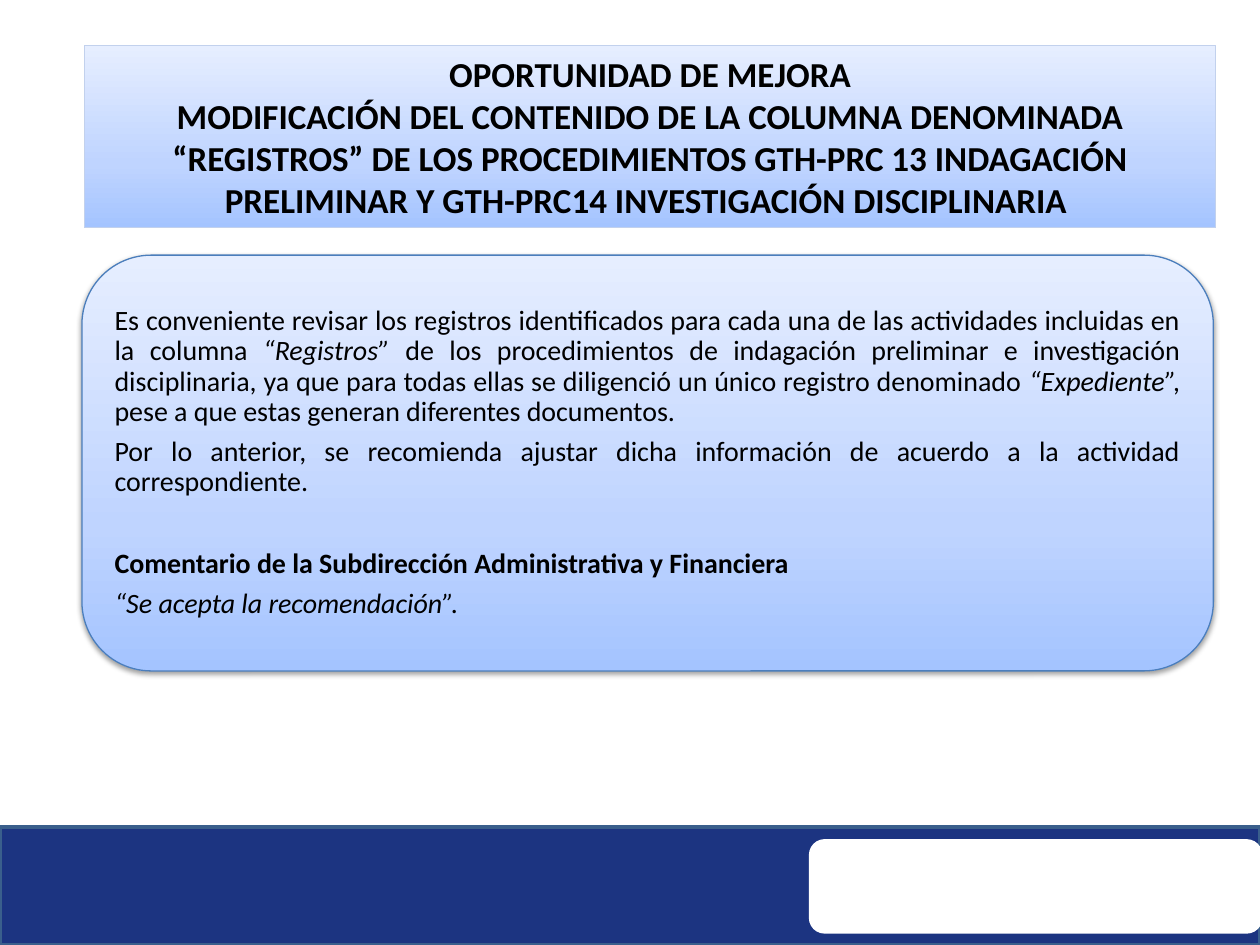
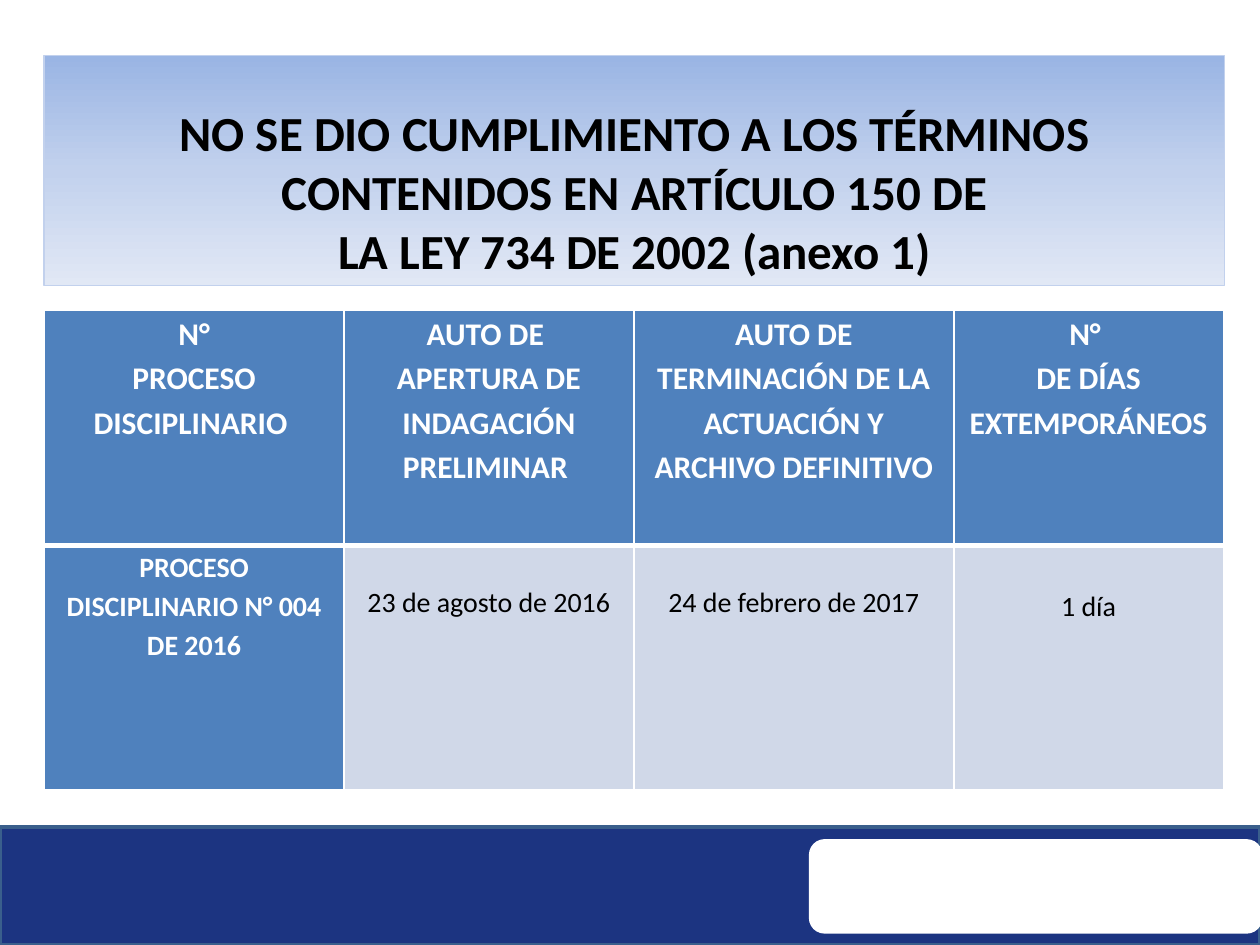
"""Builds two slides on an audit finding: a recommendation and a table of missed deadlines."""
from copy import deepcopy

from lxml import etree
from pptx import Presentation
from pptx.dml.color import RGBColor
from pptx.enum.shapes import MSO_SHAPE as SHAPE
from pptx.enum.text import MSO_ANCHOR as ANCHOR, PP_ALIGN as ALIGN
from pptx.oxml import parse_xml
from pptx.oxml.ns import nsdecls, qn
from pptx.util import Inches, Pt

FONT = "Calibri"
BLACK, WHITE = "000000", "FFFFFF"
NAVY, NAVY_EDGE = "1C3481", "3A5F8C"
BLUE, PALE_BLUE, TITLE_EDGE, BODY_EDGE = "4F81BD", "D0D8E8", "C2D1ED", "4B7EBC"
SKY = [(0, "E6EEFF"), (0.65, "BFD4FF"), (1, "A4C4FF")]
HAZE = [(0, "9AB5E4"), (0.5, "C2D1ED"), (1, "E1E8F5")]

rgb = RGBColor.from_string
prs = Presentation()
prs.slide_width, prs.slide_height = Inches(10), Inches(7.5)
PCT_W, PCT_H = prs.slide_width / 100, prs.slide_height / 100


def add_box(slide, kind, x, y, w, h, fill, edge=None, edge_pt=0.75):
    """Adds a shape placed in percent of the slide, with a plain or top-to-bottom gradient fill."""
    sp = slide.shapes.add_shape(kind, round(x * PCT_W), round(y * PCT_H),
                                round(w * PCT_W), round(h * PCT_H))
    sp.shadow.inherit = False
    if isinstance(fill, str):
        sp.fill.solid()
        sp.fill.fore_color.rgb = rgb(fill)
    else:
        sp.fill.gradient()
        sp.fill.gradient_angle = 270
        stop_list = sp._element.spPr.find(".//" + qn("a:gsLst"))
        stop_list.append(deepcopy(stop_list[0]))
        for stop, (pos, color) in zip(sp.fill.gradient_stops, fill):
            stop.position = pos
            stop.color.rgb = rgb(color)
    if edge:
        sp.line.color.rgb = rgb(edge)
        sp.line.width = Pt(edge_pt)
    else:
        sp.line.fill.background()
    return sp


def add_text(tf, paragraphs, size, color=BLACK, align=ALIGN.CENTER, spacing=1.0, gaps=()):
    """Fills a text frame; each paragraph is a list of (text, style), style being b, i or empty."""
    tf.word_wrap = True
    for n, runs in enumerate(paragraphs):
        p = tf.add_paragraph() if n else tf.paragraphs[0]
        p.alignment, p.line_spacing = align, spacing
        if gaps and n:
            p.space_before = Pt(gaps[n - 1])
        for text, style in runs:
            r = p.add_run()
            r.text = text
            r.font.name, r.font.size = FONT, Pt(size)
            r.font.bold, r.font.italic = "b" in style, "i" in style
            r.font.color.rgb = rgb(color)


slides = []
for _ in range(2):
    s = prs.slides.add_slide(prs.slide_layouts[6])
    add_box(s, SHAPE.RECTANGLE, 0, 87.5, 100, 12.5, NAVY, NAVY_EDGE, 2)
    add_box(s, SHAPE.ROUNDED_RECTANGLE, 64.2, 88.8, 36, 10, WHITE)
    slides.append(s)
advice, deadlines = slides

title = add_box(advice, SHAPE.RECTANGLE, 6.7, 4.8, 89.8, 19.3, SKY, TITLE_EDGE)
title.text_frame.vertical_anchor = ANCHOR.MIDDLE
add_text(title.text_frame, [
    [("OPORTUNIDAD DE MEJORA", "b")],
    [("MODIFICACIÓN DEL CONTENIDO DE LA COLUMNA DENOMINADA “REGISTROS” DE LOS PROCEDIMIENTOS "
      "GTH-PRC 13 INDAGACIÓN PRELIMINAR Y GTH-PRC14 INVESTIGACIÓN DISCIPLINARIA ", "b")],
], 20)

body = add_box(advice, SHAPE.ROUNDED_RECTANGLE, 6.5, 27, 89.8, 44, SKY, BODY_EDGE)
effects = body._element.spPr.find(qn("a:effectLst"))
shadow = etree.SubElement(effects, qn("a:outerShdw"), blurRad=str(Pt(3.1)), dist=str(Pt(1.6)),
                          dir="5400000", rotWithShape="0")
shade = etree.SubElement(shadow, qn("a:srgbClr"), val=BLACK)
etree.SubElement(shade, qn("a:alpha"), val="38000")
body.text_frame.vertical_anchor = ANCHOR.MIDDLE
add_text(body.text_frame, [
    [("Es conveniente revisar los registros identificados para cada una de las actividades "
      "incluidas en la columna ", ""),
     ("“Registros” ", "i"),
     ("de los procedimientos de indagación preliminar e investigación disciplinaria, ya que para "
      "todas ellas se diligenció un único registro denominado ", ""),
     ("“Expediente”, ", "i"),
     ("pese a que estas generan diferentes documentos.", "")],
    [("Por lo anterior, se recomienda ajustar dicha información de acuerdo a la actividad "
      "correspondiente.", "")],
    [("Comentario de la Subdirección Administrativa y Financiera", "b")],
    [("“Se acepta la recomendación”.", "i")],
], 16, align=ALIGN.JUSTIFY, spacing=0.9, gaps=(5.6, 29.5, 5.6))

COL_WIDTHS = [23.8, 23, 25.4, 21.4]
ROW_HEIGHTS = [24.9, 25.9]
HEADERS = [
    ["N°", "PROCESO DISCIPLINARIO "],
    ["AUTO DE ", "APERTURA DE INDAGACIÓN PRELIMINAR "],
    ["AUTO DE TERMINACIÓN DE LA ACTUACIÓN Y ARCHIVO DEFINITIVO"],
    ["N° ", "DE DÍAS EXTEMPORÁNEOS"],
]
CASE = [["PROCESO DISCIPLINARIO N° 004 DE 2016"], ["23 de agosto de 2016"],
        ["24 de febrero de 2017"], ["1 día"]]
CASE_TOPS = [0, 0.28, 0.28, 0.31]

table = deadlines.shapes.add_table(
    2, 4, round(3.5 * PCT_W), round(32.8 * PCT_H),
    round(sum(COL_WIDTHS) * PCT_W), round(sum(ROW_HEIGHTS) * PCT_H)).table
for col, width in zip(table.columns, COL_WIDTHS):
    col.width = round(width * PCT_W)
for row, height in zip(table.rows, ROW_HEIGHTS):
    row.height = round(height * PCT_H)
for i, texts in enumerate([HEADERS, CASE]):
    for j, lines in enumerate(texts):
        cell = table.cell(i, j)
        strong = i == 0 or j == 0
        cell.margin_left = cell.margin_right = Inches(0.07)
        cell.margin_top, cell.margin_bottom = Inches(CASE_TOPS[j] if i else 0), 0
        for side in "LRTB":
            thick = (i, side) in [(0, "B"), (1, "T")]
            cell._tc.get_or_add_tcPr().append(parse_xml(
                f'<a:ln{side} {nsdecls("a")} w="{Pt(3 if thick else 1)}"><a:solidFill>'
                f'<a:srgbClr val="{WHITE}"/></a:solidFill></a:ln{side}>'))
        cell.fill.solid()
        cell.fill.fore_color.rgb = rgb(BLUE if strong else PALE_BLUE)
        add_text(cell.text_frame, [[(line, "b" if strong else "")] for line in lines],
                 16 if i else 18, WHITE if strong else BLACK, spacing=1.15)

title = add_box(deadlines, SHAPE.RECTANGLE, 3.5, 5.9, 93.7, 24.3, HAZE, TITLE_EDGE)
title.text_frame.vertical_anchor = ANCHOR.BOTTOM
add_text(title.text_frame, [
    [("NO SE DIO CUMPLIMIENTO A LOS TÉRMINOS CONTENIDOS EN ARTÍCULO 150 DE", "b")],
    [("LA LEY 734 DE 2002 (anexo 1)", "b")],
], 28)

prs.save("out.pptx")
